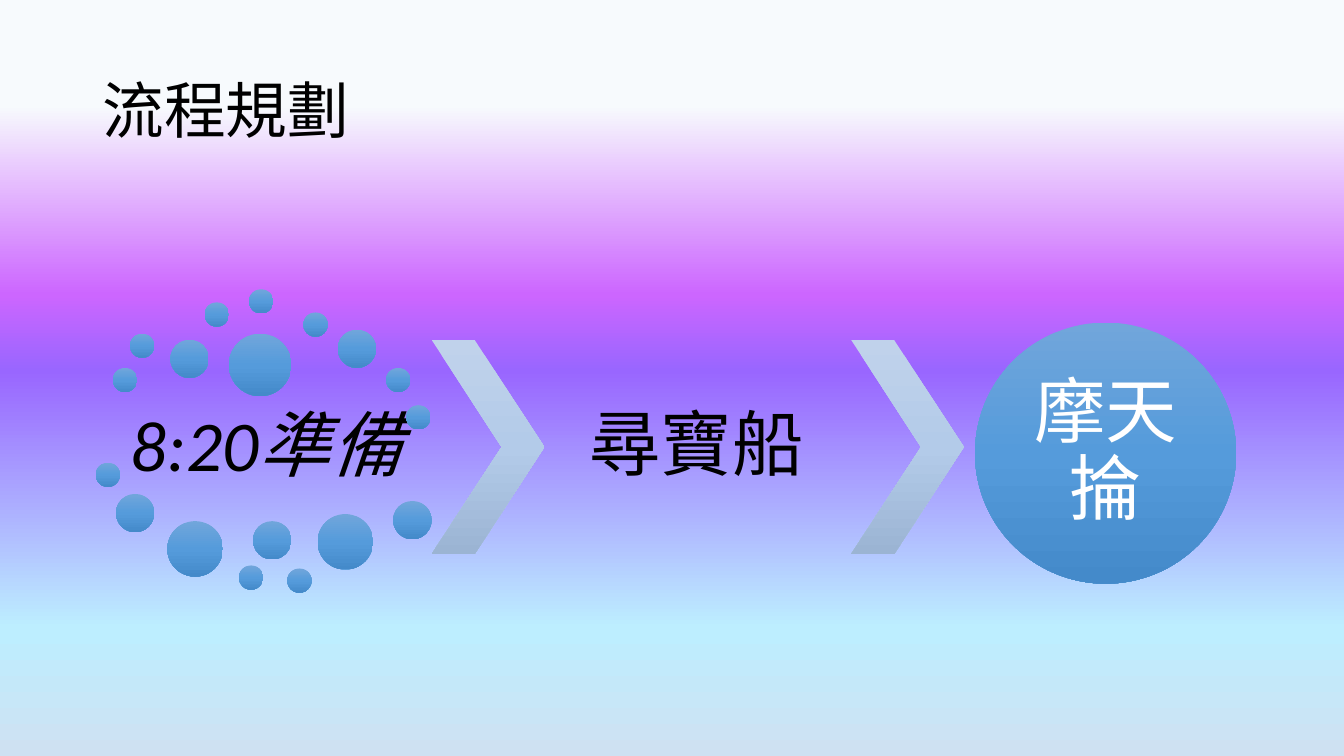
from copy import deepcopy

from pptx import Presentation, util as u
from pptx.dml.color import RGBColor
from pptx.enum import shapes, text
from pptx.oxml.ns import qn

prs = Presentation()
prs.slide_width, prs.slide_height = u.Inches(13.33), u.Inches(7.5)
s = prs.slides.add_slide(prs.slide_layouts[6])
CELL = prs.slide_height / 75  # grid of 75 rows and about 133 columns

BLUE = [(0, "71A6DB"), (50, "559BDB"), (100, "448ACA")]
PALE = [(0, "C0D2EB"), (50, "B3CBE9"), (100, "9BB4D3")]
SKY = [(14, "F7FAFD"), (39, "CC66FF"), (49, "9966FF"), (83, "BDEEFF"), (100, "CEE1F2")]


def paint(fill, element, stops):
    """Fill from top to bottom with (percent, hex colour) stops."""
    fill.gradient()
    fill.gradient_angle = 270
    gs_list = next(element.iter(qn("a:gsLst")))
    for _ in stops[2:]:
        gs_list.append(deepcopy(gs_list[0]))
    for stop, (percent, color) in zip(fill.gradient_stops, stops):
        stop.position = percent / 100
        stop.color.rgb = RGBColor.from_string(color)


def add(kind, box, stops=None, words="", inset=(0, 0), align=text.PP_ALIGN.CENTER,
        color="000000", size=51, italic=None):
    """Place a preset shape, or a text box when kind is None; box is in cells."""
    place = [round(v * CELL) for v in box]
    if kind is None:
        sp = s.shapes.add_textbox(*place)
    else:
        sp = s.shapes.add_shape(kind, *place)
        sp.shadow.inherit = False
        sp.line.fill.background()
        paint(sp.fill, sp.element, stops)
    if words:
        tf = sp.text_frame
        side, top = [round(v * CELL) for v in inset]
        frame = {"word_wrap": True, "vertical_anchor": text.MSO_ANCHOR.MIDDLE,
                 "margin_left": side, "margin_right": side,
                 "margin_top": top, "margin_bottom": top}
        for name, value in frame.items():
            setattr(tf, name, value)
        p = tf.paragraphs[0]
        p.alignment, p.line_spacing = align, 0.9
        r = p.add_run()
        r.text = words
        font = {"name": "Calibri", "size": u.Pt(size), "italic": italic}
        for name, value in font.items():
            setattr(r.font, name, value)
        r.font.color.rgb = RGBColor.from_string(color)
    return sp


# Background and title
paint(s.background.fill, s.element, SKY)
add(None, (9.2, 4, 115, 14.5), words="流程規劃", inset=(1, 0.5),
    align=text.PP_ALIGN.LEFT, size=44)

# First step: label with a ring of dots
OVAL = shapes.MSO_SHAPE.OVAL
add(None, (11.2, 39.5, 30.4, 10), words="8:20準備", inset=(0.7, 0.7), italic=True)
dots = {
    2.4: [(11.2, 36.5), (12.9, 33.1), (20.3, 30), (24.7, 28.7), (30.1, 31), (38.3, 36.5),
          (40.3, 40.2), (9.5, 45.9), (23.7, 56.1), (28.5, 56.4)],
    3.8: [(16.9, 33.7), (33.5, 32.7), (11.5, 49), (25.1, 51.7), (39, 49.7)],
    5.5: [(16.6, 51.7), (31.5, 51)],
    6.2: [(22.7, 33.1)],
}
for size, places in dots.items():
    for col, row in places:
        add(OVAL, (col, row, size, size), BLUE)

# Chevrons between the steps
for i in range(2):
    sp = add(shapes.MSO_SHAPE.CHEVRON, (42.8 + 41.6 * i, 33.7, 11.2, 21.3), PALE)
    sp.adjustments[0] = 0.62

# Second step
add(None, (53.9, 33.7, 30.4, 21.3), words="尋寶船", inset=(0.7, 0.7))

# Last step: disc with its label
disc, pad = 25.9, 3.8
add(OVAL, (96.7, 32, disc, disc), BLUE)
add(None, (96.7 + pad, 32 + pad, disc - 2 * pad, disc - 2 * pad), words="摩天掄", color="FFFFFF")

prs.save("out.pptx")
